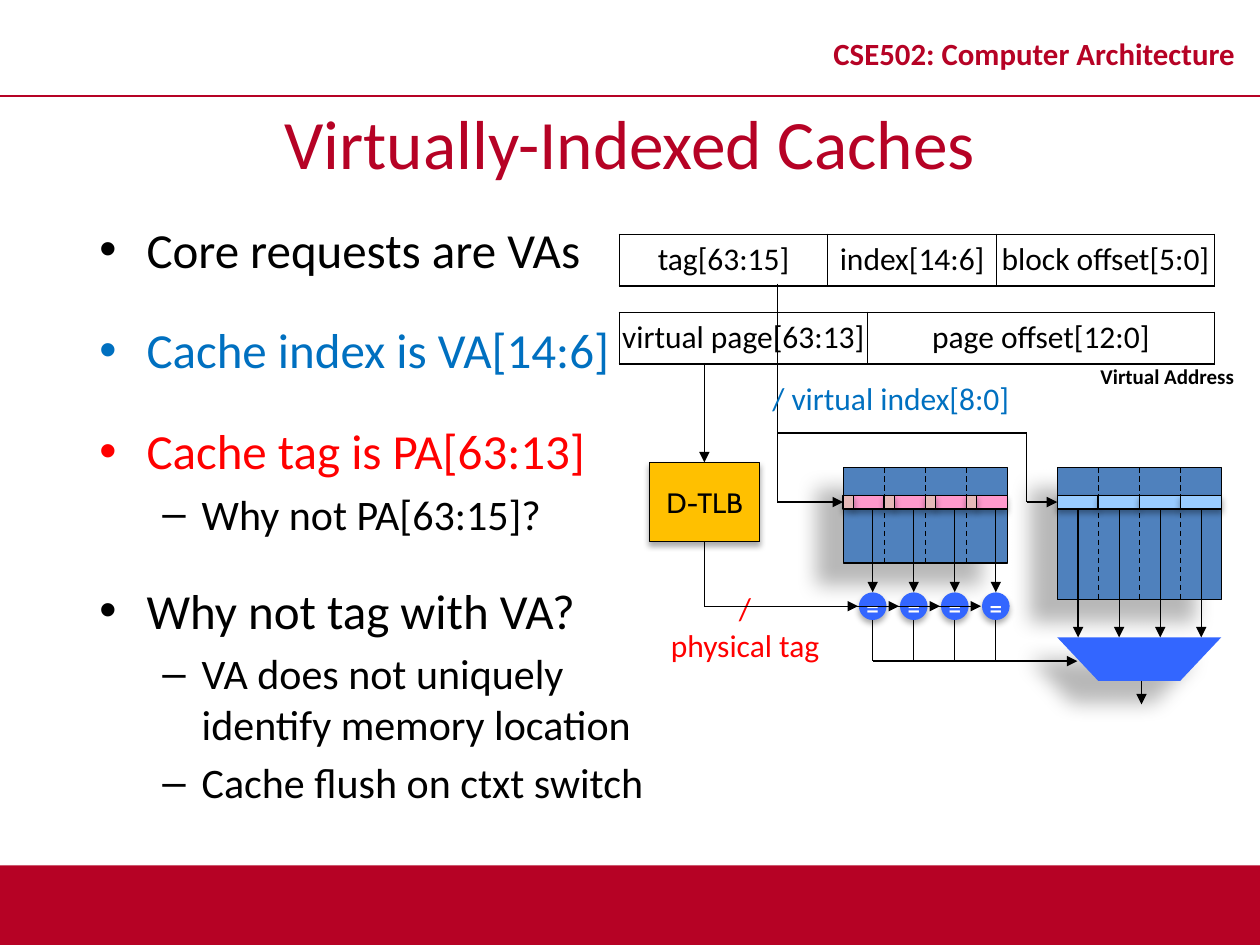
from lxml.etree import SubElement as Sub
from pptx import Presentation
from pptx.dml.color import RGBColor
from pptx.enum.dml import MSO_LINE
from pptx.enum.shapes import MSO_CONNECTOR as Conn, MSO_SHAPE as Geo
from pptx.enum.text import MSO_ANCHOR as Anchor, PP_ALIGN as Align
from pptx.oxml.ns import qn
from pptx.util import Pt

RED, BLACK, BLUE, STEEL = "B60225", "000000", "3366FF", "4F81BD"
SOFT = (32, 3.5, 2.2, 90)
DEEP = (28, 11.8, 19.7, 141)
BASE = (35, 3.1, 1.8, 90)
WAY = 23.45
TOP, ROW, ROW_H = 267.1, 283, 7.9
LEFT, RIGHT = 481.8, 604.1
TAG_Y = 346.4


def color(code):
    return RGBColor.from_string(code)


def shade(shape, look):
    shape.shadow.inherit = False
    alpha, blur, dist, angle = look
    fx = shape._element.spPr.find(qn("a:effectLst"))
    out = Sub(fx, qn("a:outerShdw"), blurRad=str(Pt(blur)), dist=str(Pt(dist)),
              dir=str(angle * 60000), algn="ctr", rotWithShape="0")
    tint = Sub(out, qn("a:srgbClr"), val=BLACK)
    Sub(tint, qn("a:alpha"), val=str(alpha * 1000))


def paint(shape, fill, edge, look):
    shape.fill.solid()
    shape.fill.fore_color.rgb = color(fill)
    if edge:
        shape.line.color.rgb = color(BLACK)
        shape.line.width = Pt(0.75)
    else:
        shape.line.fill.background()
    shade(shape, look)


def style(para, size, ink, name="Calibri", bold=False, align=Align.CENTER):
    para.alignment = align
    font = para.font
    font.size, font.name, font.bold = Pt(size), name, bold
    font.color.rgb = color(ink)


def block(slide, x, y, w, h, fill, look=SOFT, edge=True, geo=Geo.RECTANGLE):
    shape = slide.shapes.add_shape(geo, Pt(x), Pt(y), Pt(w), Pt(h))
    paint(shape, fill, edge, look)
    return shape


def label(shape, text, ink):
    frame = shape.text_frame
    frame.word_wrap = False
    frame.vertical_anchor = Anchor.MIDDLE
    frame.margin_left = frame.margin_right = 0
    frame.text = text
    style(frame.paragraphs[0], 16, ink, "Cabin")


def line(slide, x, y, x2, y2, head=False, dash=False, ink=BLACK, width=0.75):
    wire = slide.shapes.add_connector(Conn.STRAIGHT, Pt(x), Pt(y), Pt(x2), Pt(y2))
    wire.line.color.rgb = color(ink)
    wire.line.width = Pt(width)
    if dash:
        wire.line.dash_style = MSO_LINE.DASH
    if head:
        Sub(wire.line._get_or_add_ln(), qn("a:tailEnd"), type="triangle")
    Sub(wire._element.spPr, qn("a:effectLst"))


def write(slide, x, y, w, h, text, size, ink, bold=False, align=Align.CENTER,
          anchor=Anchor.TOP, space=None):
    frame = slide.shapes.add_textbox(Pt(x), Pt(y), Pt(w), Pt(h)).text_frame
    frame.word_wrap = True
    frame.vertical_anchor = anchor
    frame.text = text
    for para in frame.paragraphs:
        para.line_spacing = space
        style(para, size, ink, bold=bold, align=align)


def bullets(slide, items):
    frame = slide.shapes.add_textbox(Pt(49.7), Pt(121.7), Pt(328.3), Pt(365)).text_frame
    frame.word_wrap = True
    kinds = [("•", 27, -27, 24, 28), ("–", 58.5, -22.5, 4.8, 24)]
    for i, (level, text, ink) in enumerate(items):
        mark, left, hang, gap, size = kinds[level]
        para = frame.paragraphs[0] if i == 0 else frame.add_paragraph()
        para.text = text
        para.level = level
        props = para._p.get_or_add_pPr()
        props.set("marL", str(Pt(left)))
        props.set("indent", str(Pt(hang)))
        Sub(props, qn("a:buFont"), typeface="Arial")
        Sub(props, qn("a:buChar"), char=mark)
        para.space_before = Pt(gap if i else 0)
        style(para, size, ink, align=Align.LEFT)


def border(cell):
    props = cell._tc.get_or_add_tcPr()
    for i, side in enumerate(("lnL", "lnR", "lnT", "lnB")):
        edge = props.makeelement(qn("a:" + side), {"w": str(Pt(1))})
        Sub(Sub(edge, qn("a:solidFill")), qn("a:srgbClr"), val=BLACK)
        props.insert(i, edge)


def fields(slide, y, parts):
    high = 29.4
    wide = sum(w for _, w in parts)
    table = slide.shapes.add_table(1, len(parts), Pt(354), Pt(y), Pt(wide), Pt(high)).table
    table.first_row = table.horz_banding = False
    for i, (text, w) in enumerate(parts):
        table.columns[i].width = Pt(w)
        cell = table.cell(0, i)
        cell.margin_left = cell.margin_right = 0
        cell.margin_top = cell.margin_bottom = Pt(3.6)
        cell.fill.background()
        border(cell)
        cell.text = text
        style(cell.text_frame.paragraphs[0], 18, BLACK)


def cache(slide, x, high):
    block(slide, x, TOP, 4 * WAY, high, STEEL, DEEP)
    for i in range(1, 4):
        line(slide, x + i * WAY, TOP, x + i * WAY, TOP + high, dash=True)


def frame(slide):
    block(slide, 0, 494.6, 720, 45.4, RED, BASE, edge=False)
    line(slide, 0, 54.7, 720, 54.7, ink=RED, width=1)
    write(slide, 462.2, 9.4, 257.8, 45.4, "CSE502: Computer Architecture", 17.6, RED,
          bold=True, anchor=Anchor.MIDDLE, space=0.8)
    write(slide, 49.7, 53.3, 620.6, 55.4, "Virtually-Indexed Caches", 39.6, RED,
          anchor=Anchor.MIDDLE)


def lookup(slide):
    line(slide, 402.5, 207.4, 402.5, 264.2, head=True)
    line(slide, 402.5, 309.6, 402.5, TAG_Y)
    line(slide, 444.2, 162, 444.2, 286.9)
    write(slide, 434.2, 213.1, 205.2, 28.8, "/ virtual index[8:0]", 18, "0070C0",
          align=Align.LEFT)
    line(slide, 444.2, 247.5, 586.8, 247.5)
    cache(slide, LEFT, 54.7)
    cache(slide, RIGHT, 75.6)
    for i in range(4):
        x = LEFT + i * WAY
        block(slide, x + 6, ROW, WAY - 6, ROW_H, "FF99CC")
        block(slide, x, ROW, 6, ROW_H, "E6B9B8")
        block(slide, RIGHT + i * WAY, ROW, WAY, ROW_H, "99CCFF")
    line(slide, 586.8, 247.5, 586.8, 286.9)
    line(slide, 586.8, 286.9, RIGHT, 286.9, head=True)
    line(slide, 444.2, 286.9, LEFT, 286.9, head=True)


def select(slide):
    line(slide, 652.3, 376.6, 652.3, 402.5, head=True)
    pen = slide.shapes.build_freeform(Pt(RIGHT), Pt(364.2))
    pen.add_line_segments([(Pt(RIGHT + WAY), Pt(389.1)), (Pt(RIGHT + 3 * WAY), Pt(389.1)),
                           (Pt(RIGHT + 4 * WAY), Pt(364.2))], close=True)
    paint(pen.convert_to_shape(), BLUE, False, DEEP)
    for i in range(4):
        x = RIGHT + 12 + i * WAY
        line(slide, x, 291.6, x, 364.2, head=True)


def compare(slide):
    label(block(slide, 371.2, 264.2, 62.9, 45.4, "FFC000"), "D-TLB", BLACK)
    write(slide, 360, 332.8, 131.5, 51, "/\nphysical tag", 18, "FF0000")
    for i in range(4):
        x = 498.7 + i * WAY
        line(slide, x, 291.6, x, 338.4, head=True)
        line(slide, x - 96.2, TAG_Y, x - 8.4, TAG_Y, head=True)
        dot = block(slide, x - 7.9, TAG_Y - 7.9, 15.8, 15.8, BLUE, edge=False, geo=Geo.OVAL)
        label(dot, "=", "FFFFFF")
        line(slide, x, 354.3, x, 377.8)
    line(slide, 498.7, 377.8, 615.6, 377.8, head=True)


def main():
    deck = Presentation()
    deck.slide_width, deck.slide_height = Pt(720), Pt(540)
    slide = deck.slides.add_slide(deck.slide_layouts[6])
    frame(slide)
    bullets(slide, [
        (0, "Core requests are VAs", BLACK),
        (0, "Cache index is VA[14:6]", "0070C0"),
        (0, "Cache tag is PA[63:13]", "FF0000"),
        (1, "Why not PA[63:15]?", BLACK),
        (0, "Why not tag with VA?", BLACK),
        (1, "VA does not uniquely identify memory location", BLACK),
        (1, "Cache flush on ctxt switch", BLACK),
    ])
    fields(slide, 133.9, [("tag[63:15]", 119), ("index[14:6]", 96.5),
                          ("block offset[5:0]", 124.5)])
    fields(slide, 178.5, [("virtual page[63:13]", 141.6), ("page offset[12:0]", 198.4)])
    lookup(slide)
    select(slide)
    compare(slide)
    write(slide, 613.4, 204.5, 107.3, 21.6, "Virtual Address", 12, BLACK, bold=True)
    deck.save("out.pptx")


if __name__ == "__main__":
    main()
